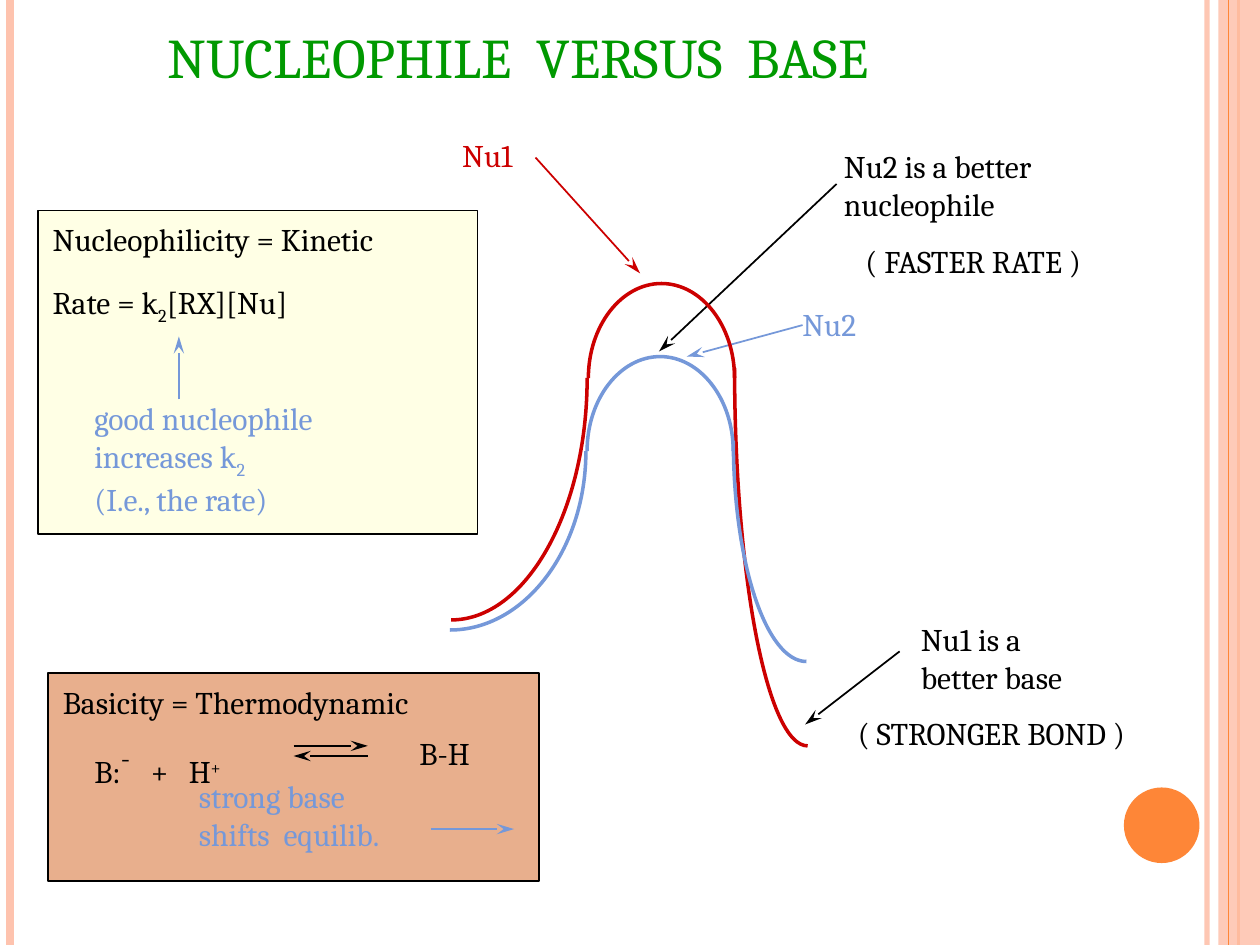
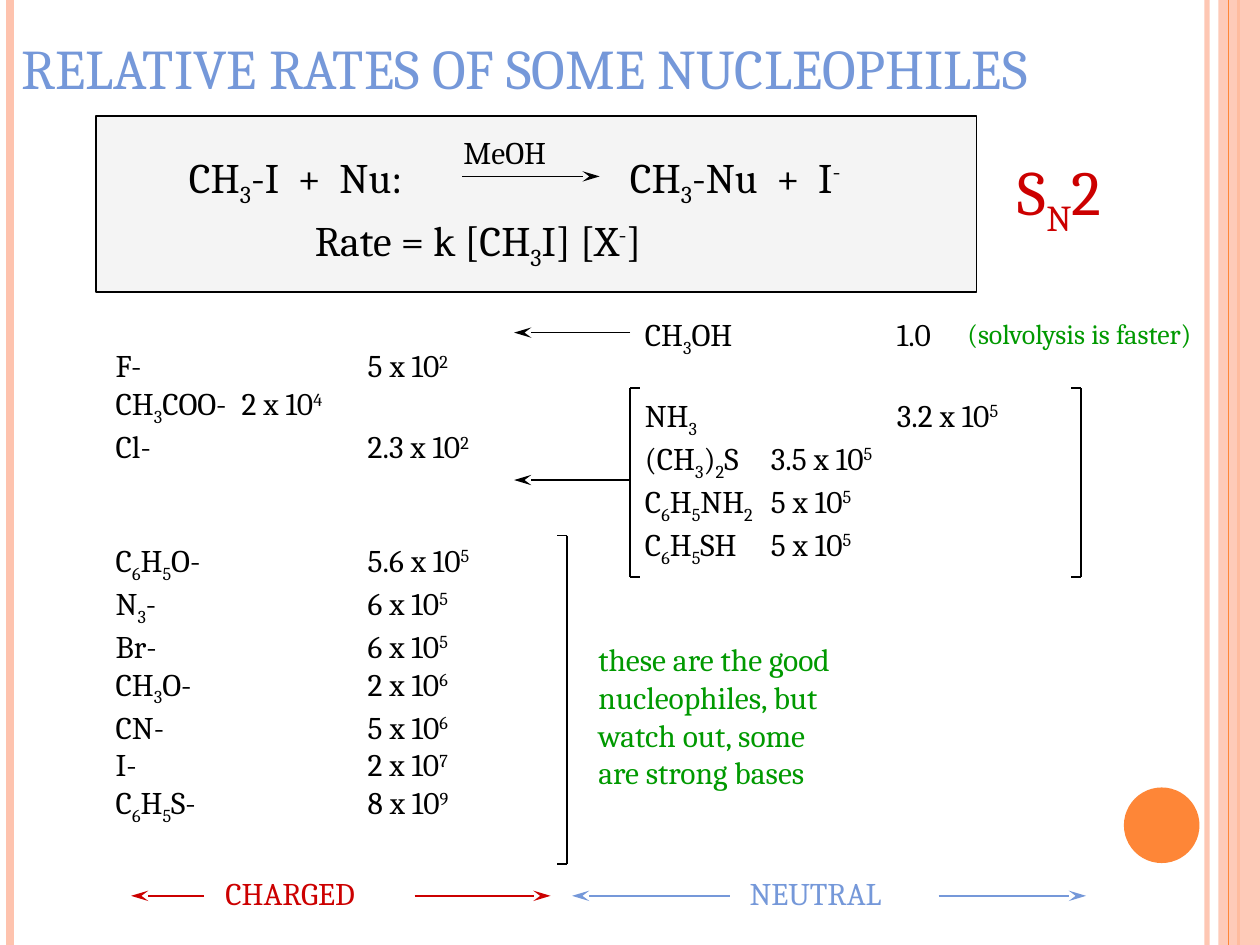
"""Build two slides on nucleophiles, bases and their relative rates."""
import math

import pptx
import pptx.dml.color
import pptx.enum.shapes
import pptx.oxml
import pptx.oxml.ns
import pptx.util
from lxml import etree

Inches = pptx.util.Inches
Pt = pptx.util.Pt
RGBColor = pptx.dml.color.RGBColor
MSO_SHAPE = pptx.enum.shapes.MSO_SHAPE
qn = pptx.oxml.ns.qn

FONT = "Cambria"
BLACK = RGBColor(0x00, 0x00, 0x00)
RED = RGBColor(0xCC, 0x00, 0x00)
BLUE = RGBColor(0x75, 0x98, 0xD9)
GREEN = RGBColor(0x00, 0x99, 0x00)
PEACH = RGBColor(0xFE, 0xC3, 0xAE)
ORANGE = RGBColor(0xFE, 0x86, 0x37)
RUST = RGBColor(0xD2, 0x61, 0x1C)
CREAM = RGBColor(0xFF, 0xFF, 0xCC)
GREY = RGBColor(0xEA, 0xEA, 0xEA)

BASELINES = {"_": "-25000", "^": "30000"}
RATE_TABS = (1, 2)
BEZIER_ARM = 0.55


def set_alpha(sp, percent):
    """Make the first colour of a shape or line partly transparent."""
    clr = next(sp._element.spPr.iter(qn("a:srgbClr")))
    etree.SubElement(clr, qn("a:alpha")).set("val", str(percent * 1000))


def add_shape(slide, kind, x, y, w, h, color, alpha=None, border=None):
    """Add a filled preset shape, with a thin border if a colour is given."""
    sp = slide.shapes.add_shape(kind, Inches(x), Inches(y), Inches(w), Inches(h))
    sp.shadow.inherit = False
    sp.fill.solid()
    sp.fill.fore_color.rgb = color
    if border is None:
        sp.line.fill.background()
    else:
        sp.line.color.rgb = border
        sp.line.width = Pt(1)
    if alpha:
        set_alpha(sp, alpha)


def add_line(slide, x1, y1, x2, y2, color=BLACK, width=1):
    """Add a straight line without shadow."""
    line = slide.shapes.add_connector(
        pptx.enum.shapes.MSO_CONNECTOR.STRAIGHT,
        Inches(x1), Inches(y1), Inches(x2), Inches(y2))
    line.line.color.rgb = color
    line.line.width = Pt(width)
    etree.SubElement(line._element.spPr, qn("a:effectLst"))
    return line


def add_arrow(slide, x1, y1, x2, y2, color=BLACK):
    """Add a line with a long stealth arrowhead at its second point."""
    line = add_line(slide, x1, y1, x2, y2, color)
    ln = line._element.spPr.find(qn("a:ln"))
    etree.SubElement(ln, qn("a:tailEnd"), type="stealth", w="med", len="lg")


def add_bracket(slide, x, top, bottom, tick):
    """Add a square bracket whose ticks reach sideways by the given length."""
    add_line(slide, x, top, x, bottom)
    for y in (top, bottom):
        add_line(slide, x, y, x + tick, y)


def add_runs(p, formula):
    """Fill a paragraph; _ lowers and ^ raises the character that follows."""
    plain = ""
    chars = iter(formula)
    for ch in chars:
        if ch not in BASELINES:
            plain += ch
            continue
        if plain:
            p.add_run().text = plain
            plain = ""
        r = p.add_run()
        r.text = next(chars)
        r._r.get_or_add_rPr().set("baseline", BASELINES[ch])
    if plain:
        p.add_run().text = plain


def add_text(slide, x, y, w, h, lines, color=BLACK, size=18, gaps=None, tabs=()):
    """Add a text box; gaps maps a line number to the points before it."""
    tf = slide.shapes.add_textbox(Inches(x), Inches(y), Inches(w), Inches(h)).text_frame
    tf.word_wrap = True
    for i, formula in enumerate(lines):
        p = tf.paragraphs[0] if i == 0 else tf.add_paragraph()
        add_runs(p, formula)
        if gaps and i in gaps:
            p.space_before = Pt(gaps[i])
        if tabs:
            tab_list = etree.SubElement(p._p.get_or_add_pPr(), qn("a:tabLst"))
            for stop in tabs:
                etree.SubElement(tab_list, qn("a:tab"), pos=str(Inches(stop)), algn="l")
        p.font.name = FONT
        p.font.size = Pt(size)
        p.font.color.rgb = color
    return tf


def add_title(slide, x, y, w, title, color):
    """Add the slide title."""
    add_text(slide, x, y, w, 0.63, [title], color, 32)


def add_arc(slide, cx, cy, rx, ry, start, quarters, color):
    """Add an elliptical arc with one Bezier curve for each quarter turn."""
    def point(angle, arm=0.0):
        """Return the point at an angle, moved along its tangent by arm."""
        cos, sin = math.cos(angle), math.sin(angle)
        return Inches(cx + rx * (cos - arm * sin)), Inches(cy + ry * (sin + arm * cos))

    angles = [math.radians(start + 90 * i) for i in range(quarters + 1)]
    builder = slide.shapes.build_freeform(*point(angles[0]))
    for a, b in zip(angles, angles[1:]):
        builder.add_line_segments(
            [point(a, BEZIER_ARM), point(b, -BEZIER_ARM), point(b)], close=False)
    sp = builder.convert_to_shape()
    outline = next(sp._element.iter(qn("a:path")))
    segments = outline.findall(qn("a:lnTo"))
    for i in range(0, len(segments), 3):
        curve = etree.SubElement(outline, qn("a:cubicBezTo"))
        for segment in segments[i:i + 3]:
            curve.append(segment[0])
            outline.remove(segment)
    sp.shadow.inherit = False
    sp.fill.background()
    sp.line.color.rgb = color
    sp.line.width = Pt(2)


def add_energy_curve(slide, cx, cy, rise, right_top, drop, color):
    """Add a reaction profile: its peak, the rise to it, and the drop."""
    add_arc(slide, cx, cy, 0.58, 0.75, 180, 2, color)
    add_arc(slide, cx - 1.67, cy, 1.08, rise, 0, 1, color)
    add_arc(slide, cx + 1.16, right_top, 0.58, drop, 90, 1, color)


def add_slide(prs):
    """Add a blank slide with the side bands and the orange disc."""
    slide = prs.slides.add_slide(prs.slide_layouts[6])
    set_alpha(add_line(slide, 9.58, 0, 9.58, 7.5, PEACH, 3), 93)
    add_line(slide, 0.08, 0, 0.08, 7.5, PEACH, 4.5)
    add_line(slide, 9.83, 0, 9.83, 7.5, ORANGE, 1.5)
    add_shape(slide, MSO_SHAPE.RECTANGLE, 9.67, 0, 0.33, 7.5, PEACH, 87)
    add_line(slide, 9.75, 0, 9.75, 7.5, ORANGE, 0.75)
    add_shape(slide, MSO_SHAPE.OVAL, 8.92, 6.25, 0.6, 0.6, ORANGE)
    return slide


def build_comparison(prs):
    """Contrast nucleophilicity with basicity beside two energy curves."""
    s = add_slide(prs)
    add_shape(s, MSO_SHAPE.RECTANGLE, 0.38, 5.34, 3.9, 1.65, RUST, 50, BLACK)
    add_shape(s, MSO_SHAPE.RECTANGLE, 0.3, 1.67, 3.49, 2.57, CREAM, 50, BLACK)
    add_title(s, 1.23, 0.13, 6.99, "NUCLEOPHILE  VERSUS  BASE", GREEN)

    add_arrow(s, 6.64, 1.46, 5.23, 2.79)
    add_arrow(s, 7.14, 5.17, 6.39, 5.75)
    add_text(s, 6.6, 1.12, 2.17, 0.77, ["Nu2 is a better", "nucleophile"])
    add_text(s, 7.21, 4.87, 1.75, 0.77, ["Nu1 is a", "better base"])
    add_text(s, 6.77, 1.87, 2.48, 0.43, ["( FASTER RATE )"])
    add_text(s, 6.71, 5.62, 3.04, 0.43, ["( STRONGER BOND )"])

    add_text(s, 0.32, 1.7, 3.46, 0.43, ["Nucleophilicity = Kinetic"])
    add_text(s, 0.32, 2.2, 2.54, 0.43, ["Rate = k_2[RX][Nu]"])
    add_arrow(s, 1.42, 3.17, 1.42, 2.67, BLUE)
    add_text(s, 0.65, 3.12, 2.52, 1.1,
             ["good nucleophile", "increases k_2", "(I.e., the rate)"], BLUE)

    add_text(s, 0.4, 5.37, 3.77, 0.43, ["Basicity = Thermodynamic"])
    tf = add_text(s, 0.65, 5.78, 1.47, 0.43, ["B:^-\t+\tH^+"], tabs=(0.45, 0.75))
    tf.paragraphs[0].runs[1].font.size = Pt(28)
    add_arrow(s, 2.33, 5.92, 2.92, 5.92)
    add_arrow(s, 2.92, 6, 2.33, 6)
    add_text(s, 3.23, 5.78, 0.7, 0.43, ["B-H"])
    add_text(s, 1.48, 6.12, 2.07, 0.77, ["strong base", "shifts  equilib."], BLUE)
    add_arrow(s, 3.42, 6.58, 4.08, 6.58, BLUE)

    add_arrow(s, 4.25, 1.25, 5.08, 2.17, RED)
    add_text(s, 3.57, 1.03, 0.74, 0.43, ["Nu1"], RED)
    add_arrow(s, 6.37, 2.58, 5.45, 2.83, BLUE)
    add_text(s, 6.27, 2.37, 0.74, 0.43, ["Nu2"], BLUE)
    add_energy_curve(s, 5.25, 3, 1.92, 2.92, 3, RED)
    add_energy_curve(s, 5.24, 3.58, 1.42, 3.5, 1.75, BLUE)


def build_rates(prs):
    """List the relative rates of charged and neutral nucleophiles."""
    s = add_slide(prs)
    add_shape(s, MSO_SHAPE.RECTANGLE, 0.76, 0.92, 6.99, 1.4, GREY, 50, BLACK)
    add_text(s, 3.58, 1.01, 1.03, 0.43, ["MeOH"])
    add_title(s, 0.07, 0.22, 9.87, "RELATIVE RATES OF SOME NUCLEOPHILES", BLUE)
    add_text(s, 1.4, 1.15, 2.14, 0.5, ["CH_3-I  +  Nu:"], size=24)
    add_text(s, 4.9, 1.15, 2.11, 0.5, ["CH_3-Nu  +  I^-"], size=24)
    add_arrow(s, 3.67, 1.4, 4.76, 1.4)
    add_text(s, 2.4, 1.65, 3.16, 0.5, ["Rate = k [CH_3I] [X^-]"], size=24)
    add_text(s, 7.98, 1.16, 1.09, 0.7, ["S_N2"], RED, 36)

    charged = [
        "F-\t\t5 x 10^2",
        "CH_3COO-\t2 x 10^4",
        "Cl-\t\t2.3 x 10^2",
        "C_6H_5O-\t\t5.6 x 10^5",
        "N_3-\t\t6 x 10^5",
        "Br-\t\t6 x 10^5",
        "CH_3O-\t\t2 x 10^6",
        "CN-\t\t5 x 10^6",
        "I-\t\t2 x 10^7",
        "C_6H_5S-\t\t8 x 10^9",
    ]
    neutral = [
        "CH_3OH\t\t1.0",
        "NH_3\t\t3.2 x 10^5",
        "(CH_3)_2S\t3.5 x 10^5",
        "C_6H_5NH_2\t5 x 10^5",
        "C_6H_5SH\t5 x 10^5",
    ]
    add_text(s, 0.82, 2.7, 3.34, 4.1, charged, gaps={3: 43.4}, tabs=RATE_TABS)
    add_text(s, 5.02, 2.45, 3.34, 2.43, neutral, gaps={1: 21.7}, tabs=RATE_TABS)
    add_text(s, 7.58, 2.46, 2.34, 0.37, ["(solvolysis is faster)"], GREEN, 16)
    add_text(s, 4.65, 5.03, 2.72, 1.43,
             ["these are the good", "nucleophiles, but", "watch out, some", "are strong bases"],
             GREEN)

    for y in (2.64, 3.81):
        add_arrow(s, 5, y, 4.08, y)
    add_bracket(s, 5, 3.08, 4.58, 0.08)
    add_bracket(s, 8.58, 3.08, 4.58, -0.08)
    add_bracket(s, 4.5, 4.25, 6.86, -0.08)

    add_text(s, 1.69, 6.89, 1.63, 0.43, ["CHARGED"], RED)
    add_text(s, 5.85, 6.89, 1.55, 0.43, ["NEUTRAL"], BLUE)
    for start, end, color in ((1.62, 1.04, RED), (3.29, 4.37, RED),
                              (5.79, 4.54, BLUE), (7.45, 8.62, BLUE)):
        add_arrow(s, start, 7.11, end, 7.11, color)


def main():
    """Build and save the presentation."""
    prs = pptx.Presentation()
    prs.slide_width = Inches(10)
    prs.slide_height = Inches(7.5)
    build_comparison(prs)
    build_rates(prs)
    prs.save("out.pptx")


if __name__ == "__main__":
    main()
